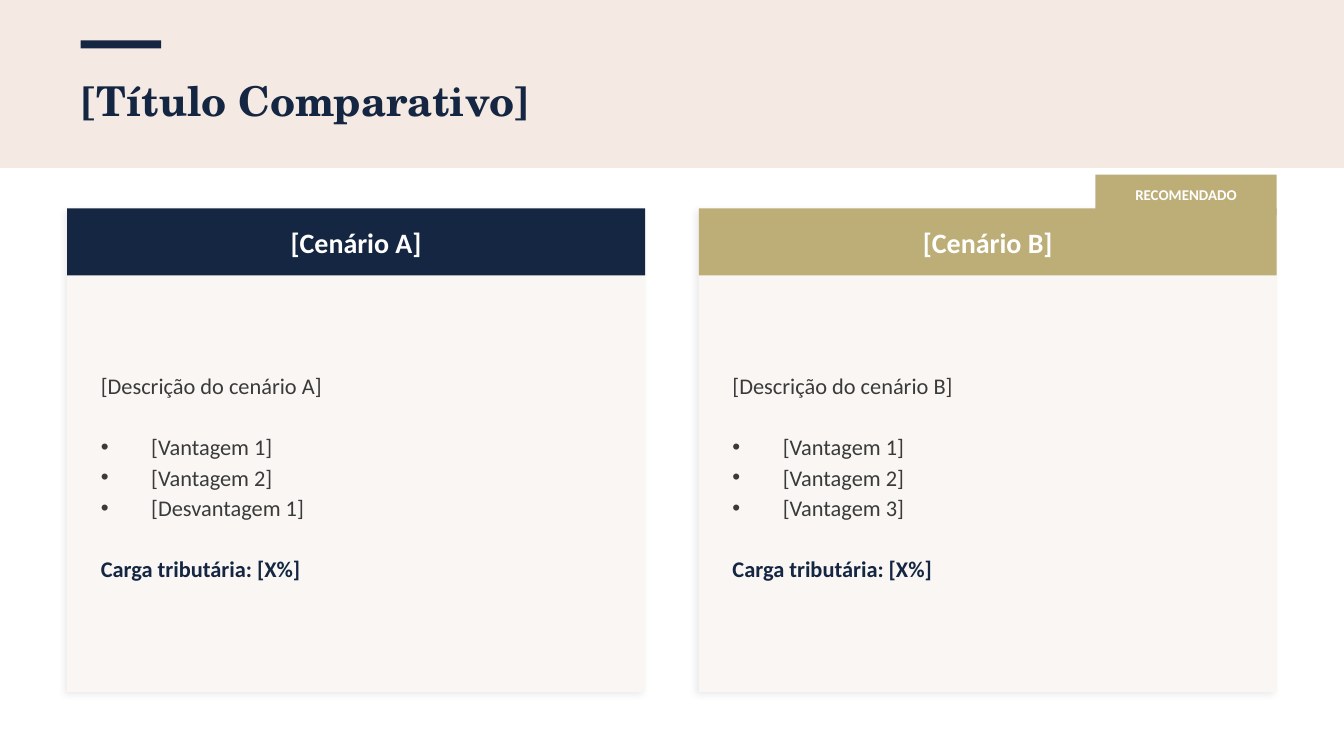
from lxml import etree
from pptx import Presentation
from pptx.dml.color import RGBColor
from pptx.enum.shapes import MSO_SHAPE
from pptx.enum.text import MSO_ANCHOR, MSO_AUTO_SIZE, PP_ALIGN
from pptx.oxml import parse_xml
from pptx.oxml.ns import nsdecls, qn
from pptx.util import Inches, Pt

RECTANGLE = MSO_SHAPE.RECTANGLE
MIDDLE = MSO_ANCHOR.MIDDLE
NO_AUTOFIT = MSO_AUTO_SIZE.NONE
LEFT, CENTER = PP_ALIGN.LEFT, PP_ALIGN.CENTER

NAVY, GOLD, BLUSH = "142642", "BDAE78", "F5EAE3"
CREAM, GRAY, WHITE = "F9F6F3", "3A3A3A", "FFFFFF"
TWO_CONTENT = 3


def color(value):
    return RGBColor.from_string(value)


class ComparisonSlide:
    heading_font = "TeX Gyre Schola"
    body_font = "Calibri"

    def __init__(self, presentation):
        self.slide = presentation.slides.add_slide(presentation.slide_layouts[TWO_CONTENT])

    def block(self, x, y, width, height, fill):
        block = self.slide.shapes.add_shape(
            RECTANGLE, Inches(x), Inches(y), Inches(width), Inches(height))
        block.shadow.inherit = False
        block.fill.solid()
        block.fill.fore_color.rgb = color(fill)
        block.line.fill.background()
        return block

    def card(self, x, y, width, height, fill):
        card = self.block(x, y, width, height, fill)
        effects = card.element.spPr.find(qn("a:effectLst"))
        effects.append(parse_xml(
            f'<a:outerShdw {nsdecls("a")} blurRad="{Pt(4)}" dist="{Pt(2)}" '
            f'dir="{135 * 60000}" algn="bl" rotWithShape="0">'
            '<a:srgbClr val="000000"><a:alpha val="8000"/></a:srgbClr></a:outerShdw>'))

    def label(self, x, y, width, height, fill, text, size):
        frame = self.frame(self.block(x, y, width, height, fill))
        frame.text = text
        self.style(frame.paragraphs[0], self.body_font, size, WHITE, True, CENTER)

    def title(self, text, x, y, width, height):
        frame = self.placeholder(0, x, y, width, height)
        frame.text = text
        self.style(frame.paragraphs[0], self.heading_font, 22, NAVY, True)

    def details(self, index, x, y, width, height, description, points, burden):
        frame = self.placeholder(index, x, y, width, height)
        lines = [description, *points, burden]
        frame.text = "\n".join(lines)
        for paragraph, line in zip(frame.paragraphs, lines):
            self.bullet(paragraph, line in points)
            is_burden = line == burden
            self.style(paragraph, self.body_font, 12, NAVY if is_burden else GRAY, is_burden)
            # One line of air separates the list from its neighbours
            paragraph.space_after = Pt(18 if line in (description, points[-1]) else 2)

    def placeholder(self, index, x, y, width, height):
        holder = self.slide.placeholders[index]
        holder.left, holder.top = Inches(x), Inches(y)
        holder.width, holder.height = Inches(width), Inches(height)
        # Bring the text in front of the blocks drawn so far
        self.slide.shapes.element.append(holder.element)
        return self.frame(holder)

    def frame(self, shape):
        frame = shape.text_frame
        frame.margin_left = frame.margin_right = frame.margin_top = frame.margin_bottom = 0
        frame.word_wrap = True
        frame.auto_size = NO_AUTOFIT
        frame.vertical_anchor = MIDDLE
        return frame

    def bullet(self, paragraph, visible):
        properties = paragraph._p.get_or_add_pPr()
        indent = Pt(27) if visible else 0
        properties.set("marL", str(indent))
        properties.set("indent", str(-indent))
        if visible:
            etree.SubElement(properties, qn("a:buChar")).set("char", "•")
        else:
            etree.SubElement(properties, qn("a:buNone"))

    def style(self, paragraph, font_name, size, font_color, bold, alignment=LEFT):
        paragraph.alignment = alignment
        paragraph.space_before = Pt(0)
        font = paragraph.font
        font.name, font.size, font.bold = font_name, Pt(size), bold
        font.color.rgb = color(font_color)


def main():
    presentation = Presentation()
    # Widescreen, 16:9
    presentation.slide_width = Inches(10)
    presentation.slide_height = Inches(10) * 9 // 16
    comparison = ComparisonSlide(presentation)

    # Header band, accent and title
    comparison.block(0, 0, 10, 1.25, BLUSH)
    comparison.block(0.6, 0.3, 0.6, 0.06, NAVY)
    comparison.title("[Título Comparativo]", 0.6, 0.42, 8.8, 0.65)

    # Scenario cards
    scenarios = [
        ("A", NAVY, ["[Vantagem 1]", "[Vantagem 2]", "[Desvantagem 1]"]),
        ("B", GOLD, ["[Vantagem 1]", "[Vantagem 2]", "[Vantagem 3]"]),
    ]
    card_width, gap, top = 4.3, 0.4, 1.55
    for number, (letter, accent, points) in enumerate(scenarios):
        left = 0.5 + number * (card_width + gap)
        comparison.card(left, top, card_width, 3.6, CREAM)
        comparison.label(left, top, card_width, 0.5, accent, f"[Cenário {letter}]", 15)
        comparison.details(number + 1, left + 0.25, 2.2, 3.8, 2.7,
                           f"[Descrição do cenário {letter}]", points,
                           "Carga tributária: [X%]")

    # Recommendation tag
    comparison.label(8.15, 1.3, 1.35, 0.3, GOLD, "RECOMENDADO", 8)

    presentation.save("out.pptx")


if __name__ == "__main__":
    main()
